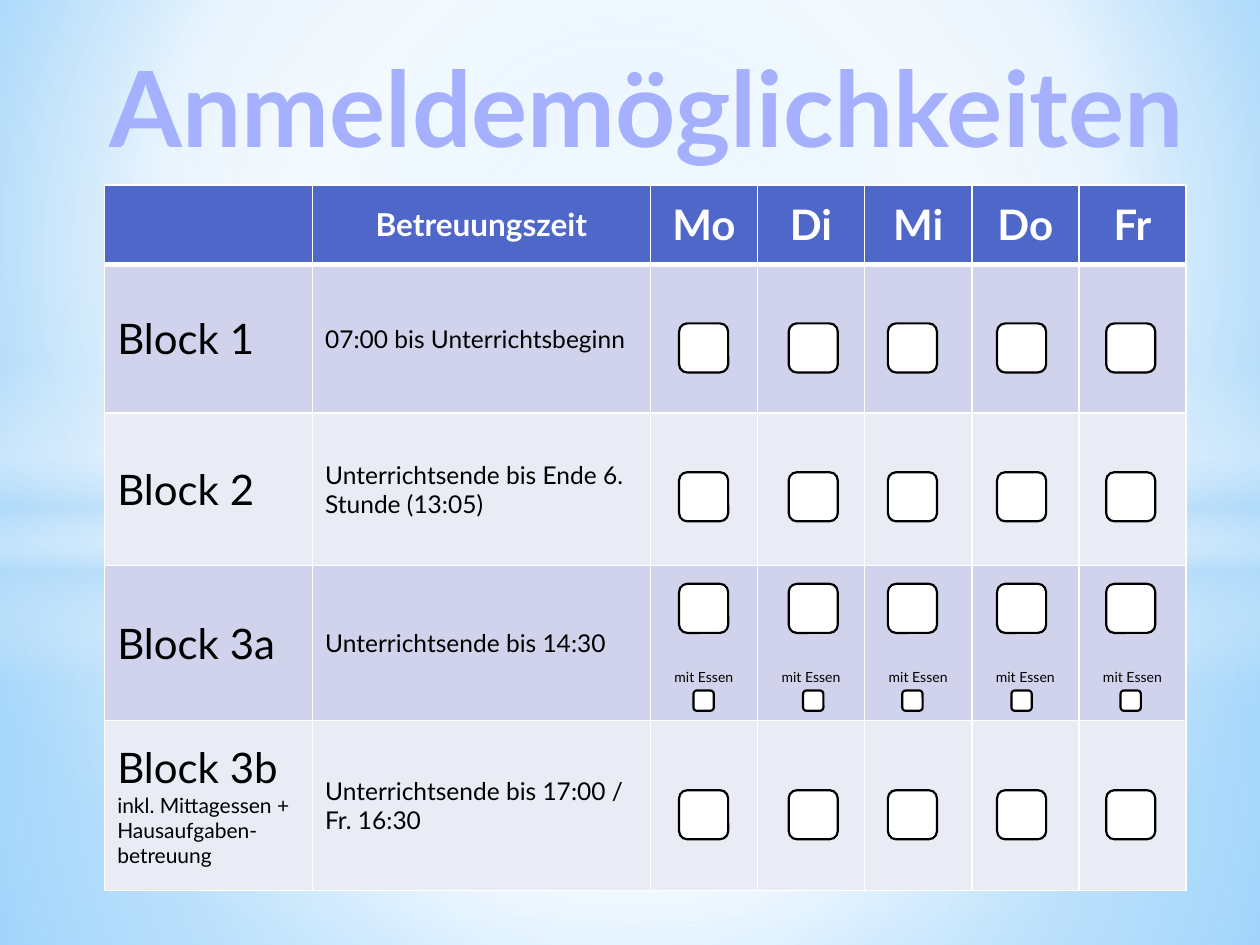
"""Build a slide with the weekly care registration table."""
import dataclasses
import typing

import pptx
import pptx.dml.color
import pptx.enum.shapes
import pptx.enum.text
import pptx.oxml
import pptx.oxml.ns
import pptx.util

Cm = pptx.util.Cm
Align = pptx.enum.text.PP_ALIGN
Anchor = pptx.enum.text.MSO_ANCHOR
Preset = pptx.enum.shapes.MSO_SHAPE


@dataclasses.dataclass(frozen=True)
class Theme:
    font: str = "Lato"
    title: str = "A5B0FF"
    header: str = "4E67C8"
    bands: tuple = ("D0D3EB", "E9EBF5")
    dark: str = "000000"
    light: str = "FFFFFF"
    sky: str = "B4DCFA"
    title_size: float = 60
    large_size: float = 24
    heading_size: float = 18
    body_size: float = 14
    note_size: float = 12
    meal_size: float = 8
    border: float = 1
    header_border: float = 3
    box_line: float = 1.25


THEME = Theme()


class Stop(typing.NamedTuple):
    position: int
    color: str
    opacity: int = 100


class Gradient(typing.NamedTuple):
    stops: tuple
    center: typing.Optional[tuple] = (50, 50, 50, 50)


class Glow(typing.NamedTuple):
    preset: typing.Any
    top: float
    height: float
    gradient: Gradient


class Block(typing.NamedTuple):
    name: str
    time: str
    height: float
    box_top: float
    note: str = ""
    meal: str = ""


DAYS = ("Mo", "Di", "Mi", "Do", "Fr")
BOX_LEFTS = (13.69, 15.9, 17.9, 20.1, 22.3)
BOX_SIZE, MEAL_BOX_SIZE, MEAL_BOX_TOP = 0.99, 0.41, 13.92
TABLE_LEFT, TABLE_TOP, HEADER_HEIGHT = 2.11, 3.73, 1.6
COLUMN_WIDTHS = (4.19, 6.81) + (2.16,) * len(DAYS)
BLOCKS = (
    Block("Block 1", "07:00 bis Unterrichtsbeginn", 3.0, 6.52),
    Block("Block 2", "Unterrichtsende bis Ende 6. Stunde (13:05)", 3.07, 9.52),
    Block("Block 3a", "Unterrichtsende bis 14:30", 3.12, 11.77, meal="mit Essen"),
    Block("Block 3b ", "Unterrichtsende bis 17:00 / Fr. 16:30", 3.43, 15.93,
          note="inkl. Mittagessen + Hausaufgaben-betreuung"),
)
BACKDROP = Gradient((Stop(0, "9ED5FF"), Stop(60, THEME.light), Stop(100, "5BB9FF")), (20, 10, 20, 60))
GLOWS = (
    Glow(Preset.RECTANGLE, 10.74, 8.31, Gradient(
        (Stop(0, THEME.light, 91), Stop(37, THEME.light, 76), Stop(100, THEME.sky, 79)))),
    Glow(Preset.RECTANGLE, 0, 10.74, Gradient(
        (Stop(0, THEME.light, 89), Stop(48, THEME.light, 62), Stop(100, THEME.sky, 79)))),
    Glow(Preset.RECTANGLE, 7.37, 6.35, Gradient(
        (Stop(0, THEME.light, 0), Stop(29, THEME.light, 30), Stop(45, THEME.sky, 40),
         Stop(55, THEME.light, 26), Stop(65, THEME.sky, 60), Stop(100, THEME.light, 0)), None)),
    Glow(Preset.OVAL, 4.45, 14.17, Gradient((Stop(0, THEME.light), Stop(54, THEME.light, 0)))),
)


def rgb(color: str) -> pptx.dml.color.RGBColor:
    """Return the colour object for a hex value."""
    return pptx.dml.color.RGBColor.from_string(color)


def paint_gradient(fill, owner, gradient: Gradient) -> None:
    """Give a fill the stops, opacity and direction of a gradient."""
    fill.gradient()
    plain = next(owner.iter(pptx.oxml.ns.qn("a:gradFill")))
    stops = "".join(
        f'<a:gs pos="{stop.position * 1000}"><a:srgbClr val="{stop.color}">'
        f'<a:alpha val="{stop.opacity * 1000}"/></a:srgbClr></a:gs>' for stop in gradient.stops)
    direction = '<a:lin ang="5400000" scaled="0"/>'
    if gradient.center:
        left, top, right, bottom = (side * 1000 for side in gradient.center)
        direction = (f'<a:path path="circle"><a:fillToRect l="{left}" t="{top}" '
                     f'r="{right}" b="{bottom}"/></a:path>')
    plain.getparent().replace(plain, pptx.oxml.parse_xml(
        f'<a:gradFill {pptx.oxml.ns.nsdecls("a")} rotWithShape="1">'
        f'<a:gsLst>{stops}</a:gsLst>{direction}</a:gradFill>'))


def style_run(run, size: float, color: str, bold: bool = False) -> None:
    """Set font, size, colour and weight of a run."""
    run.font.name = THEME.font
    run.font.size = pptx.util.Pt(size)
    run.font.bold = bold
    run.font.color.rgb = rgb(color)


def draw_background(slide) -> None:
    """Paint the backdrop and its translucent glows."""
    paint_gradient(slide.background.fill, slide.element, BACKDROP)
    for glow in GLOWS:
        shape = slide.shapes.add_shape(glow.preset, Cm(0), Cm(glow.top), Cm(25.4), Cm(glow.height))
        shape.shadow.inherit = False
        shape.line.fill.background()
        paint_gradient(shape.fill, shape.element, glow.gradient)


def draw_title(slide, text: str) -> None:
    """Add the slide title."""
    frame = slide.shapes.add_textbox(Cm(0.89), Cm(0.74), Cm(23.8), Cm(3.2)).text_frame
    frame.word_wrap = True
    frame.text = text
    paragraph = frame.paragraphs[0]
    paragraph.alignment = Align.CENTER
    paragraph._p.get_or_add_pPr().set("marL", str(Cm(0.5)))
    style_run(paragraph.runs[0], THEME.title_size, THEME.title, bold=True)


def set_borders(cell, top: float, bottom: float) -> None:
    """Draw white lines around a cell."""
    widths = {"L": THEME.border, "R": THEME.border, "T": top, "B": bottom}
    for index, (side, width) in enumerate(widths.items()):
        cell._tc.get_or_add_tcPr().insert(index, pptx.oxml.parse_xml(
            f'<a:ln{side} {pptx.oxml.ns.nsdecls("a")} w="{pptx.util.Pt(width)}"><a:solidFill>'
            f'<a:srgbClr val="{THEME.light}"/></a:solidFill></a:ln{side}>'))


def write_cell(cell, text: str, size: float, color: str = THEME.dark,
               bold: bool = False, align=Align.LEFT) -> None:
    """Write one formatted paragraph into a cell."""
    cell.text = text
    cell.vertical_anchor = Anchor.MIDDLE
    paragraph = cell.text_frame.paragraphs[0]
    paragraph.alignment = align
    for run in paragraph.runs:
        style_run(run, size, color, bold)


def draw_table(slide) -> None:
    """Add the table of blocks, times and weekdays."""
    heights = (HEADER_HEIGHT,) + tuple(block.height for block in BLOCKS)
    table = slide.shapes.add_table(
        len(heights), len(COLUMN_WIDTHS), Cm(TABLE_LEFT), Cm(TABLE_TOP),
        Cm(sum(COLUMN_WIDTHS)), Cm(sum(heights))).table
    for column, width in zip(table.columns, COLUMN_WIDTHS):
        column.width = Cm(width)
    for index, (row, height) in enumerate(zip(table.rows, heights)):
        row.height = Cm(height)
        for cell in row.cells:
            cell.fill.solid()
            cell.fill.fore_color.rgb = rgb(THEME.bands[(index - 1) % 2] if index else THEME.header)
            set_borders(cell, THEME.header_border if index == 1 else THEME.border,
                        THEME.header_border if index == 0 else THEME.border)
    write_cell(table.cell(0, 1), "Betreuungszeit", THEME.heading_size, THEME.light, True, Align.CENTER)
    for column, day in enumerate(DAYS, start=2):
        write_cell(table.cell(0, column), day, THEME.large_size, THEME.light, True, Align.CENTER)
    for row, block in enumerate(BLOCKS, start=1):
        name_cell = table.cell(row, 0)
        write_cell(name_cell, block.name, THEME.large_size)
        write_cell(table.cell(row, 1), block.time, THEME.body_size)
        if block.note:
            note = name_cell.text_frame.paragraphs[0].add_run()
            note.text = block.note
            style_run(note, THEME.note_size, THEME.dark)
        if block.meal:
            for column in range(2, len(COLUMN_WIDTHS)):
                cell = table.cell(row, column)
                write_cell(cell, block.meal, THEME.meal_size, align=Align.CENTER)
                cell.vertical_anchor = Anchor.BOTTOM
                cell.margin_bottom = Cm(0.7)


def draw_checkbox(slide, left: float, top: float, size: float) -> None:
    """Add an empty rounded checkbox."""
    box = slide.shapes.add_shape(Preset.ROUNDED_RECTANGLE, Cm(left), Cm(top), Cm(size), Cm(size))
    box.shadow.inherit = False
    box.fill.solid()
    box.fill.fore_color.rgb = rgb(THEME.light)
    box.line.color.rgb = rgb(THEME.dark)
    box.line.width = pptx.util.Pt(THEME.box_line)


def main() -> None:
    """Build and save the presentation."""
    presentation = pptx.Presentation()
    presentation.slide_width, presentation.slide_height = Cm(25.4), Cm(19.05)
    slide = presentation.slides.add_slide(presentation.slide_layouts[6])
    draw_background(slide)
    draw_title(slide, "Anmeldemöglichkeiten")
    draw_table(slide)
    for block in BLOCKS:
        for left in BOX_LEFTS:
            draw_checkbox(slide, left, block.box_top, BOX_SIZE)
    for left in BOX_LEFTS:
        draw_checkbox(slide, left + (BOX_SIZE - MEAL_BOX_SIZE) / 2, MEAL_BOX_TOP, MEAL_BOX_SIZE)
    presentation.save("out.pptx")


if __name__ == "__main__":
    main()
